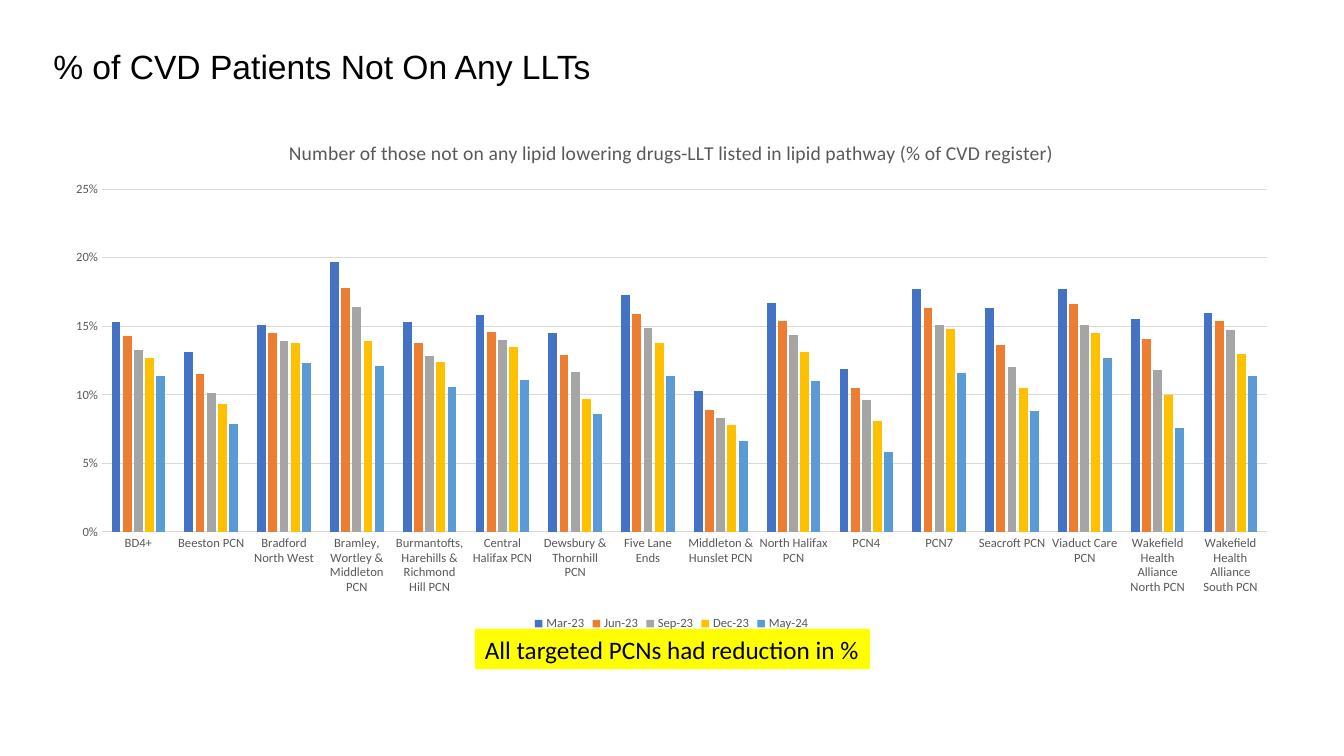
from dataclasses import dataclass

from pptx import Presentation
from pptx import util as u
from pptx.chart.data import CategoryChartData
from pptx.dml.color import RGBColor
from pptx.enum import chart as c, shapes, text


@dataclass(frozen=True)
class Theme:
    heading_font: str = "Arial"
    body_font: str = "Calibri"
    heading_size: int = 24
    callout_size: int = 18
    chart_title_size: int = 14
    chart_size: int = 10
    label_size: int = 9
    black: str = "000000"
    label: str = "595959"
    grid: str = "D9D9D9"
    highlight: str = "FFFF00"
    series: tuple = ("4472C4", "ED7D31", "A5A5A5", "FFC000", "5B9BD5")


THEME = Theme()
WIDTH, HEIGHT = 13.33, 7.5
TITLE_BOX = (0.43, 0.4, 10.61, 0.56)
CHART_BOX = (0.51, 1.19, 12.3, 5.11)
CALLOUT_BOX = (4.71, 6.24, 3.92, 0.4)

QUARTERS = ("Mar-23", "Jun-23", "Sep-23", "Dec-23", "May-24")
NETWORKS = {
    "BD4+": (0.153, 0.143, 0.133, 0.127, 0.114),
    "Beeston PCN": (0.131, 0.115, 0.101, 0.093, 0.079),
    "Bradford North West": (0.151, 0.145, 0.139, 0.138, 0.123),
    "Bramley, Wortley & Middleton PCN": (0.197, 0.178, 0.164, 0.139, 0.121),
    "Burmantofts, Harehills & Richmond Hill PCN": (0.153, 0.138, 0.128, 0.124, 0.106),
    "Central Halifax PCN": (0.158, 0.146, 0.14, 0.135, 0.111),
    "Dewsbury & Thornhill PCN": (0.145, 0.129, 0.117, 0.097, 0.086),
    "Five Lane Ends": (0.173, 0.159, 0.149, 0.138, 0.114),
    "Middleton & Hunslet PCN": (0.103, 0.089, 0.083, 0.078, 0.066),
    "North Halifax PCN": (0.167, 0.154, 0.144, 0.131, 0.11),
    "PCN4": (0.119, 0.105, 0.096, 0.081, 0.058),
    "PCN7": (0.177, 0.163, 0.151, 0.148, 0.116),
    "Seacroft PCN": (0.163, 0.136, 0.12, 0.105, 0.088),
    "Viaduct Care PCN": (0.177, 0.166, 0.151, 0.145, 0.127),
    "Wakefield Health Alliance North PCN": (0.155, 0.141, 0.118, 0.1, 0.076),
    "Wakefield Health Alliance South PCN": (0.16, 0.154, 0.147, 0.13, 0.114),
}


def inches(box):
    return [u.Inches(length) for length in box]


def style_font(font, name, size, color):
    font.name = name
    font.size = u.Pt(size)
    font.bold = False
    font.color.rgb = RGBColor.from_string(color)


def style_line(line, color):
    line.color.rgb = RGBColor.from_string(color)
    line.width = u.Pt(0.75)


def add_text(frame, wording, font_name, size):
    paragraph = frame.paragraphs[0]
    paragraph.alignment = text.PP_ALIGN.LEFT
    run = paragraph.add_run()
    run.text = wording
    style_font(run.font, font_name, size, THEME.black)
    return paragraph


def add_title(slide, box, wording):
    frame = slide.shapes.add_textbox(*inches(box)).text_frame
    frame.word_wrap = True
    frame.vertical_anchor = text.MSO_ANCHOR.MIDDLE
    paragraph = add_text(frame, wording, THEME.heading_font, THEME.heading_size)
    paragraph.line_spacing = 0.9


def style_axes(chart):
    for axis in (chart.category_axis, chart.value_axis):
        axis.major_tick_mark = axis.minor_tick_mark = c.XL_TICK_MARK.NONE
        style_font(axis.tick_labels.font, THEME.body_font, THEME.label_size, THEME.label)
    style_line(chart.category_axis.format.line, THEME.grid)
    value_axis = chart.value_axis
    value_axis.minimum_scale, value_axis.maximum_scale = 0, 0.25
    value_axis.major_unit = 0.05
    value_axis.tick_labels.number_format = "0%"
    value_axis.tick_labels.number_format_is_linked = False
    value_axis.format.line.fill.background()
    style_line(value_axis.major_gridlines.format.line, THEME.grid)


def add_network_chart(slide, box, wording):
    data = CategoryChartData(number_format="0%")
    data.categories = NETWORKS
    for quarter, shares in zip(QUARTERS, zip(*NETWORKS.values())):
        data.add_series(quarter, shares)
    chart = slide.shapes.add_chart(c.XL_CHART_TYPE.COLUMN_CLUSTERED, *inches(box), data).chart
    style_font(chart.font, THEME.body_font, THEME.chart_size, THEME.black)

    run = chart.chart_title.text_frame.paragraphs[0].add_run()
    run.text = wording
    style_font(run.font, THEME.body_font, THEME.chart_title_size, THEME.label)
    chart.chart_title.include_in_layout = False

    chart.has_legend = True
    chart.legend.position = c.XL_LEGEND_POSITION.BOTTOM
    chart.legend.include_in_layout = False
    style_font(chart.legend.font, THEME.body_font, THEME.label_size, THEME.label)

    style_axes(chart)
    plot = chart.plots[0]
    plot.gap_width, plot.overlap = 219, -27
    plot.vary_by_categories = False
    for series, color in zip(plot.series, THEME.series):
        series.invert_if_negative = False
        series.format.fill.solid()
        series.format.fill.fore_color.rgb = RGBColor.from_string(color)


def add_callout(slide, box, wording):
    shape = slide.shapes.add_shape(shapes.MSO_SHAPE.RECTANGLE, *inches(box))
    shape.shadow.inherit = False
    shape.fill.solid()
    shape.fill.fore_color.rgb = RGBColor.from_string(THEME.highlight)
    shape.line.fill.background()
    frame = shape.text_frame
    frame.word_wrap = False
    frame.auto_size = text.MSO_AUTO_SIZE.SHAPE_TO_FIT_TEXT
    frame.vertical_anchor = text.MSO_ANCHOR.TOP
    add_text(frame, wording, THEME.body_font, THEME.callout_size)


def main():
    presentation = Presentation()
    presentation.slide_width = u.Inches(WIDTH)
    presentation.slide_height = u.Inches(HEIGHT)
    slide = presentation.slides.add_slide(presentation.slide_layouts[6])
    add_title(slide, TITLE_BOX, "% of CVD Patients Not On Any LLTs")
    add_network_chart(
        slide,
        CHART_BOX,
        "Number of those not on any lipid lowering drugs-LLT listed in lipid pathway (% of CVD register)",
    )
    add_callout(slide, CALLOUT_BOX, "All targeted PCNs had reduction in %")
    presentation.save("out.pptx")


if __name__ == "__main__":
    main()
